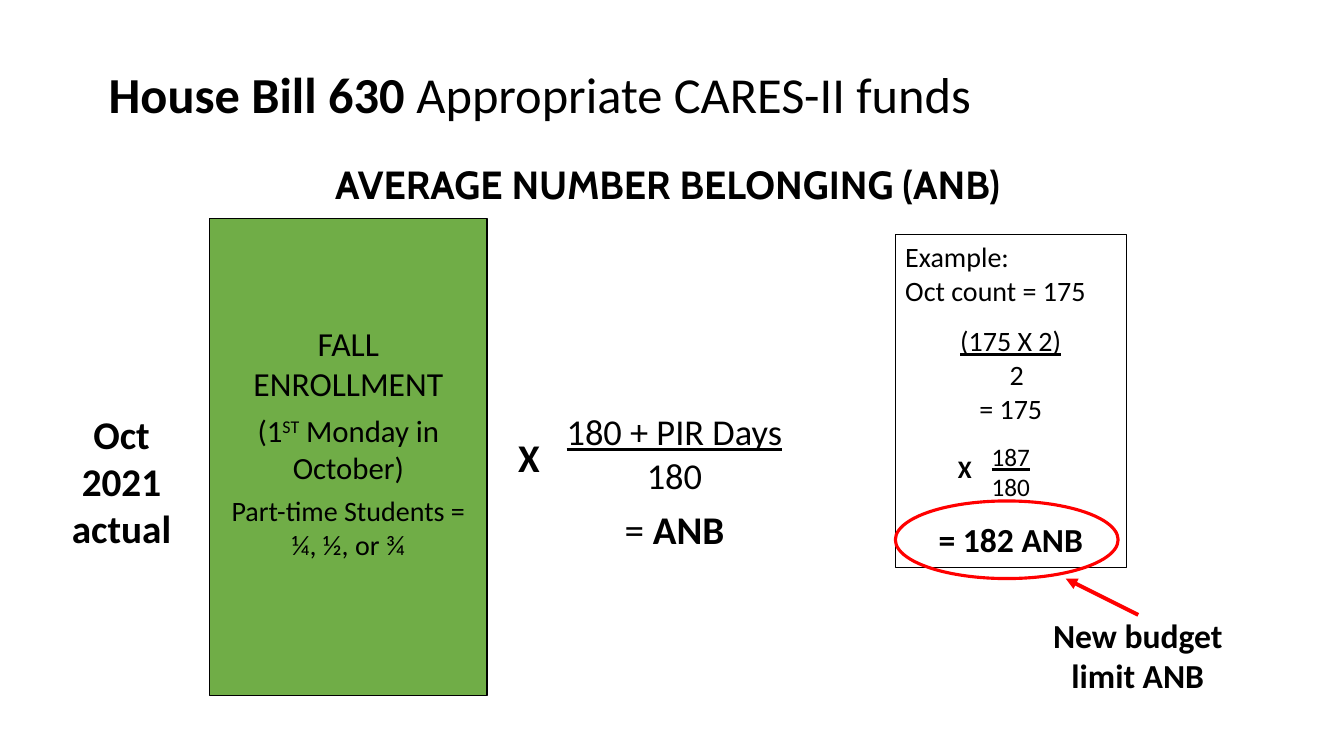
from pptx import Presentation
from pptx.dml.color import RGBColor
from pptx.enum.shapes import MSO_CONNECTOR, MSO_SHAPE
from pptx.enum.text import MSO_ANCHOR, PP_ALIGN
from pptx.oxml.ns import qn
from pptx.util import Pt
from lxml.etree import SubElement

PX = 9144  # EMU per px, 100 px to the inch
COLORS = {"text": "000000", "enrollment": "70AD47", "highlight": "FF0000"}
LEFT, CENTER = PP_ALIGN.LEFT, PP_ALIGN.CENTER


def color(name):
    return RGBColor.from_string(COLORS[name])


def scaled(*lengths):
    return [length * PX for length in lengths]


def line(runs, size, align=CENTER, before=0, after=0, indent=0, spacing=None):
    """Describe a paragraph; runs are (text, styles), styles from b, u and ^."""
    if isinstance(runs, str):
        runs = [(runs, "")]
    return runs, size, align, before, after, indent, spacing


def write(shape, lines, font="Calibri", top=5, anchor=MSO_ANCHOR.TOP):
    frame = shape.text_frame
    frame.word_wrap = True
    frame.vertical_anchor = anchor
    frame.margin_top = top * PX
    for index, (runs, size, align, before, after, indent, spacing) in enumerate(lines):
        paragraph = frame.add_paragraph() if index else frame.paragraphs[0]
        paragraph.alignment = align
        paragraph.space_before, paragraph.space_after = Pt(before), Pt(after)
        if spacing:
            paragraph.line_spacing = spacing
        if indent:
            paragraph._p.get_or_add_pPr().set("marL", str(indent * PX))
        for text, styles in runs:
            run = paragraph.add_run()
            run.text = text
            run.font.name, run.font.size = font, Pt(size)
            run.font.color.rgb = color("text")
            run.font.bold, run.font.underline = "b" in styles, "u" in styles
            if "^" in styles:
                run.font._element.set("baseline", "30000")


def add_label(slide, box, lines, **options):
    write(slide.shapes.add_textbox(*scaled(*box)), lines, **options)


def add_outline(slide, kind, box, outline, width, fill=None):
    shape = slide.shapes.add_shape(kind, *scaled(*box))
    shape.shadow.inherit = False
    if fill:
        shape.fill.solid()
        shape.fill.fore_color.rgb = color(fill)
    else:
        shape.fill.background()
    shape.line.color.rgb = color(outline)
    shape.line.width = Pt(width)
    return shape


def add_arrow(slide, start, end):
    arrow = slide.shapes.add_connector(MSO_CONNECTOR.STRAIGHT, *scaled(*start, *end))
    arrow.line.color.rgb = color("highlight")
    arrow.line.width = Pt(2.75)
    SubElement(arrow.line._get_or_add_ln(), qn("a:tailEnd"), type="triangle")
    SubElement(arrow._element.spPr, qn("a:effectLst"))


def add_headings(slide, left, top, width):
    add_label(slide, (left, top, width, 95), [
        line([("House Bill 630 ", "b"), ("Appropriate CARES-II funds", "")], 36, LEFT, spacing=0.9),
    ], anchor=MSO_ANCHOR.MIDDLE)
    add_label(slide, (left + 110, top + 105, width - 110, 57), [
        line([("AVERAGE NUMBER BELONGING (ANB)", "b")], 28),
    ], font="Cabin")


def add_enrollment(slide, left, top, width, height):
    panel = add_outline(slide, MSO_SHAPE.RECTANGLE, (left, top, width, height),
                        "text", 1, "enrollment")
    write(panel, [
        line("FALL ENROLLMENT", 24, after=6),
        line([("(1", ""), ("ST", "^"), (" Monday in October)", "")], 22, after=6),
        line("Part-time Students = ¼, ½, or ¾", 20, after=6),
    ], top=103)
    add_label(slide, (left - 167, top + 185, 159, 151), [line([("Oct 2021 actual", "b")], 28)])


def add_formula(slide, left, top, width, height):
    add_label(slide, (left, top, width, height), [
        line([("180 + PIR Days", "u")], 26),
        line("180", 26, after=6),
        line([("= ", ""), ("ANB", "b")], 28),
    ], top=97)
    add_label(slide, (left + 16, top + 116, 33, 57), [line([("X", "b")], 28)])


def add_example(slide, left, top, width, height):
    """Place the worked example with its circled result and callout."""
    panel = add_outline(slide, MSO_SHAPE.RECTANGLE, (left, top, width, height), "text", 0.75)
    write(panel, [
        line("Example:", 20, LEFT),
        line("Oct count = 175", 20, LEFT),
        line([("(175 X 2)", "u")], 20, before=12),
        line("2", 20, indent=12),
        line("= 175", 20),
        line([("187", "u")], 18, before=12),
        line("180", 18),
        line([("= 182 ANB", "b")], 24, before=12),
    ])
    add_label(slide, (left + 50, top + 212, 38, 40), [line([("X", "b")], 18)])
    add_label(slide, (left + 141, top + 372, 199, 91), [line([("New budget limit ANB", "b")], 24)])
    add_outline(slide, MSO_SHAPE.OVAL, (left, top + 264, width - 8, 77), "highlight", 2.25)
    add_arrow(slide, (left + 241, top + 377), (left + 169, top + 341))


def main():
    deck = Presentation()
    deck.slide_width, deck.slide_height = scaled(1333, 750)
    slide = deck.slides.add_slide(deck.slide_layouts[6])
    add_headings(slide, 98, 49, 1018)
    add_enrollment(slide, 208, 217, 275, 473)
    add_formula(slide, 488, 309, 362, 261)
    add_example(slide, 888, 233, 229, 330)
    deck.save("out.pptx")


if __name__ == "__main__":
    main()
